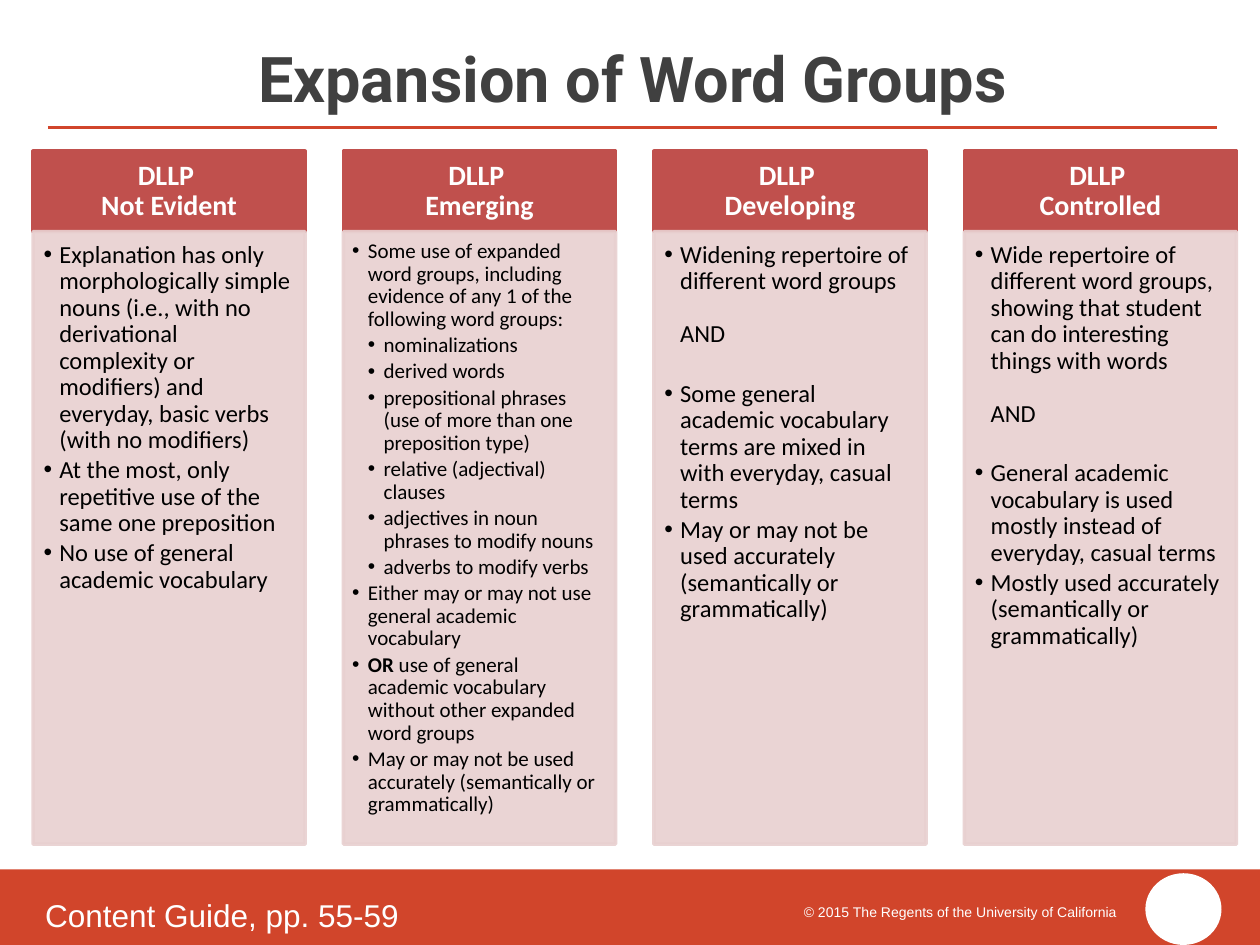
from copy import deepcopy
from dataclasses import dataclass

from lxml import etree
from pptx import Presentation
from pptx.dml.color import RGBColor
from pptx.enum.shapes import MSO_CONNECTOR, MSO_SHAPE
from pptx.enum.text import MSO_ANCHOR, PP_ALIGN
from pptx.oxml.ns import qn
from pptx.shapes.autoshape import Shape
from pptx.slide import Slide
from pptx.text.text import TextFrame
from pptx.util import Pt

RECTANGLE, ELLIPSE = MSO_SHAPE.RECTANGLE, MSO_SHAPE.OVAL
STRAIGHT = MSO_CONNECTOR.STRAIGHT
LEFT, CENTER = PP_ALIGN.LEFT, PP_ALIGN.CENTER
TOP, MIDDLE = MSO_ANCHOR.TOP, MSO_ANCHOR.MIDDLE

ORANGE = RGBColor(0xD1, 0x45, 0x2B)
RED = RGBColor(0xC0, 0x50, 0x4D)
PINK = RGBColor(0xE8, 0xD0, 0xD0)
GRAY = RGBColor(0x40, 0x40, 0x40)
WHITE = RGBColor(0xFF, 0xFF, 0xFF)
BLACK = RGBColor(0, 0, 0)

COLUMN_LEFT, COLUMN_PITCH, COLUMN_WIDTH = 18.9, 177.4, 155.5
HEADER_TOP, HEADER_HEIGHT, BODY_HEIGHT = 86.4, 46, 350
BULLET_INDENT = 9
LINE_SPACING = 0.9


@dataclass(frozen=True)
class Item:
    text: str
    level: int = 1
    bold_lead: str = ""
    bullet: bool = True
    before: float = 0
    after: float = 2


@dataclass(frozen=True)
class Column:
    level_name: str
    items: tuple[Item, ...]
    size: float = 14
    insets: tuple[float, float, float, float] = (6, 6, 8, 8.5)


AND = Item("AND", bullet=False, before=13, after=19)
ACCURACY = "used accurately (semantically or grammatically)"

COLUMNS = (
    Column("Not Evident", (
        Item("Explanation has only morphologically simple nouns (i.e., with no derivational "
             "complexity or modifiers) and everyday, basic verbs (with no modifiers)"),
        Item("At the most, only repetitive use of the same one preposition"),
        Item("No use of general academic vocabulary"),
    )),
    Column("Emerging", (
        Item("Some use of expanded word groups, including evidence of any 1 of the "
             "following word groups:"),
        Item("nominalizations", level=2),
        Item("derived words", level=2),
        Item("prepositional phrases (use of more than one preposition type)", level=2),
        Item("relative (adjectival) clauses", level=2),
        Item("adjectives in noun phrases to modify nouns", level=2),
        Item("adverbs to modify verbs", level=2),
        Item("Either may or may not use general academic vocabulary"),
        Item(" use of general academic vocabulary without other expanded word groups",
             bold_lead="OR"),
        Item(f"May or may not be {ACCURACY}"),
    ), size=12, insets=(5, 5, 6.5, 7)),
    Column("Developing", (
        Item("Widening repertoire of different word groups"),
        AND,
        Item("Some general academic vocabulary terms are mixed in with everyday, casual terms"),
        Item(f"May or may not be {ACCURACY}"),
    )),
    Column("Controlled", (
        Item("Wide repertoire of different word groups, showing that student can do "
             "interesting things with words"),
        AND,
        Item("General academic vocabulary is used mostly instead of everyday, casual terms"),
        Item(f"Mostly {ACCURACY}"),
    )),
)


def write(frame: TextFrame, text: str, *, size: float, color: RGBColor, font: str = "Calibri",
          bold: bool = False, bold_lead: str = "", align: PP_ALIGN = LEFT, level: int = 0,
          bullet: bool = False, before: float = 0, after: float = 0,
          line_spacing: float = 1.0) -> None:
    """Fill the first paragraph if it is empty, otherwise add one; level 0 has no indent."""
    paragraph = frame.paragraphs[0]
    if paragraph.runs:
        paragraph = frame.add_paragraph()
    paragraph.text = text
    if bold_lead:
        paragraph.text = bold_lead
        paragraph.add_run().text = text
    paragraph.alignment = align
    paragraph.line_spacing = line_spacing
    paragraph.space_before, paragraph.space_after = Pt(before), Pt(after)
    properties = paragraph._p.get_or_add_pPr()
    properties.set("marL", str(Pt(level * BULLET_INDENT)))
    properties.set("indent", str(Pt(-BULLET_INDENT if bullet else 0)))
    if bullet:
        etree.SubElement(properties, qn("a:buFont")).set("typeface", "Arial")
        etree.SubElement(properties, qn("a:buChar")).set("char", "•")
    else:
        etree.SubElement(properties, qn("a:buNone"))
    for index, run in enumerate(paragraph.runs):
        run.font.name, run.font.size = font, Pt(size)
        run.font.bold = bold or (bool(bold_lead) and index == 0)
        run.font.color.rgb = color
    for line_break in paragraph._p.findall(qn("a:br")):
        line_break.append(deepcopy(paragraph.runs[0]._r.rPr))


def set_frame(frame: TextFrame, insets: tuple[float, float, float, float],
              anchor: MSO_ANCHOR = TOP) -> None:
    """Insets are left, top, right, bottom."""
    frame.word_wrap = True
    frame.vertical_anchor = anchor
    (frame.margin_left, frame.margin_top,
     frame.margin_right, frame.margin_bottom) = map(Pt, insets)


def add_box(slide: Slide, kind: MSO_SHAPE, left: float, top: float, width: float,
            height: float, color: RGBColor, *, outlined: bool = False,
            opacity: int = 100) -> Shape:
    shape = slide.shapes.add_shape(kind, Pt(left), Pt(top), Pt(width), Pt(height))
    shape.shadow.inherit = False
    shape.fill.solid()
    shape.fill.fore_color.rgb = color
    if outlined:
        shape.line.color.rgb = color
        shape.line.width = Pt(2)
    else:
        shape.line.fill.background()
    if opacity < 100:
        for color_element in shape._element.spPr.iter(qn("a:srgbClr")):
            etree.SubElement(color_element, qn("a:alpha")).set("val", str(opacity * 1000))
    return shape


def add_label(slide: Slide, text: str, left: float, top: float, width: float,
              height: float, size: float) -> None:
    label = slide.shapes.add_textbox(Pt(left), Pt(top), Pt(width), Pt(height))
    label.text_frame.word_wrap = True
    write(label.text_frame, text, size=size, color=WHITE, font="Arial")


def add_title(slide: Slide, text: str) -> None:
    title = slide.shapes.title
    title.left, title.top, title.width, title.height = Pt(27.4), Pt(16.5), Pt(668), Pt(57)
    set_frame(title.text_frame, (7.2, 6, 7.2, 3.6))
    write(title.text_frame, text, size=36, color=GRAY, font="Roboto", bold=True, align=CENTER)
    rule = slide.shapes.add_connector(STRAIGHT, Pt(27.4), Pt(72.9), Pt(695.5), Pt(72.9))
    rule.line.color.rgb = ORANGE
    rule.line.width = Pt(2)
    etree.SubElement(rule._element.spPr, qn("a:effectLst"))


def add_column(slide: Slide, column: Column, left: float) -> None:
    header = add_box(slide, RECTANGLE, left, HEADER_TOP, COLUMN_WIDTH, HEADER_HEIGHT, RED,
                     outlined=True)
    set_frame(header.text_frame, (9, 5, 9, 5), MIDDLE)
    write(header.text_frame, f"DLLP \v{column.level_name}", size=16, color=WHITE, bold=True,
          align=CENTER, line_spacing=LINE_SPACING)
    body = add_box(slide, RECTANGLE, left, HEADER_TOP + HEADER_HEIGHT, COLUMN_WIDTH,
                   BODY_HEIGHT, PINK, outlined=True, opacity=90)
    set_frame(body.text_frame, column.insets)
    for item in column.items:
        write(body.text_frame, item.text, size=column.size, color=BLACK,
              bold_lead=item.bold_lead, level=item.level, bullet=item.bullet,
              before=item.before, after=item.after, line_spacing=LINE_SPACING)


def main() -> None:
    presentation = Presentation()
    presentation.slide_width, presentation.slide_height = Pt(720), Pt(540)
    slide = presentation.slides.add_slide(presentation.slide_layouts[5])
    add_box(slide, RECTANGLE, 0, 496.8, 720, 43.2, ORANGE)
    add_box(slide, ELLIPSE, 654.5, 499, 43.5, 41, WHITE)
    add_label(slide, "© 2015 The Regents of the University of California",
              452.2, 512.6, 198, 17.3, 8)
    add_title(slide, "Expansion of Word Groups")
    for index, column in enumerate(COLUMNS):
        add_column(slide, column, COLUMN_LEFT + index * COLUMN_PITCH)
    add_label(slide, "Content Guide, pp. 55-59", 18.7, 508.3, 546.5, 28.8, 18)
    presentation.save("out.pptx")


if __name__ == "__main__":
    main()
